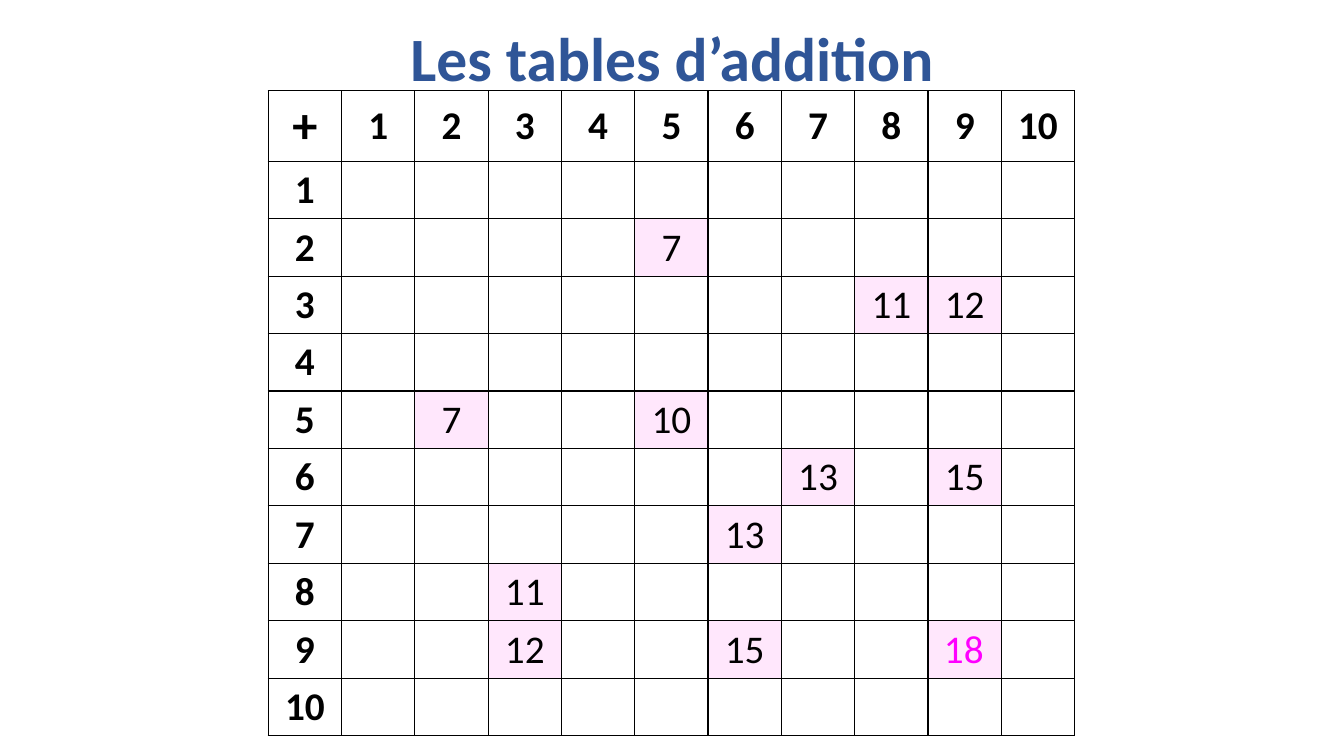
from dataclasses import dataclass
from lxml.etree import SubElement
from pptx import Presentation
from pptx.dml.color import RGBColor
from pptx.enum.text import MSO_ANCHOR, PP_ALIGN
from pptx.oxml.ns import qn
from pptx.util import Inches, Pt

TITLE = "Les tables d’addition"
OPERATOR = "+"
TERMS = range(1, 11)
GIVEN_SUMS = {(2, 5), (3, 8), (3, 9), (5, 2), (5, 5), (6, 7), (6, 9),
              (7, 6), (8, 3), (9, 3), (9, 6)}
ANSWER = (9, 9)


@dataclass(frozen=True)
class Theme:
    font: str = "Calibri"
    title: str = "2F5597"
    ink: str = "000000"
    paper: str = "FFFFFF"
    highlight: str = "FFE7FC"
    answer: str = "FF00FF"
    title_size: int = 44
    operator_size: int = 36
    number_size: int = 28
    border: int = 1


THEME = Theme()
SLIDE_W, SLIDE_H = 13.33, 7.5
GRID_LEFT, GRID_TOP, GRID_W = 2.66, 0.9, 8
HEADER_H, ROW_H = 0.7, 0.57
COUNT = len(TERMS) + 1
COLUMN_W = GRID_W / COUNT


def write(frame, text, size=THEME.number_size, color=THEME.ink, bold=False,
          anchor=MSO_ANCHOR.MIDDLE, spacing=None):
    frame.word_wrap = True
    frame.vertical_anchor = anchor
    line = frame.paragraphs[0]
    line.alignment = PP_ALIGN.CENTER
    line.line_spacing = spacing
    run = line.add_run()
    run.text = text
    run.font.name = THEME.font
    run.font.size = Pt(size)
    run.font.bold = bold
    run.font.color.rgb = RGBColor.from_string(color)


def add_text(slide, left, top, width, height, text, **style):
    box = slide.shapes.add_textbox(*map(Inches, (left, top, width, height)))
    write(box.text_frame, text, **style)


def paint(cell, color):
    properties = cell._tc.get_or_add_tcPr()
    for side in ("a:lnL", "a:lnR", "a:lnT", "a:lnB"):
        border = SubElement(properties, qn(side), w=str(Pt(THEME.border)))
        SubElement(SubElement(border, qn("a:solidFill")), qn("a:srgbClr"), val=THEME.ink)
    cell.fill.solid()
    cell.fill.fore_color.rgb = RGBColor.from_string(color)


def add_grid(slide):
    height = HEADER_H + ROW_H * len(TERMS)
    grid = slide.shapes.add_table(
        COUNT, COUNT, *map(Inches, (GRID_LEFT, GRID_TOP, GRID_W, height))).table
    grid.first_row = grid.horz_banding = False
    for index in range(COUNT):
        grid.columns[index].width = Inches(COLUMN_W)
        grid.rows[index].height = Inches(ROW_H if index else HEADER_H)
    for row in range(COUNT):
        for column in range(COUNT):
            cell = grid.cell(row, column)
            place = (row, column)
            highlighted = place in GIVEN_SUMS or place == ANSWER
            paint(cell, THEME.highlight if highlighted else THEME.paper)
            if place == (0, 0):
                write(cell.text_frame, OPERATOR, size=THEME.operator_size, bold=True)
            elif 0 in place:
                write(cell.text_frame, str(row + column), bold=True)
            elif place in GIVEN_SUMS:
                write(cell.text_frame, str(row + column))
            cell.vertical_anchor = MSO_ANCHOR.MIDDLE


def main():
    deck = Presentation()
    deck.slide_width, deck.slide_height = Inches(SLIDE_W), Inches(SLIDE_H)
    slide = deck.slides.add_slide(deck.slide_layouts[6])
    add_text(slide, 0.92, -0.11, 11.5, 1.45, TITLE, size=THEME.title_size,
             color=THEME.title, bold=True, spacing=0.9)
    add_grid(slide)
    add_text(slide, 9.23, 6.14, 0.66, ROW_H, str(sum(ANSWER)),
             color=THEME.answer, anchor=MSO_ANCHOR.TOP)
    deck.save("out.pptx")


if __name__ == "__main__":
    main()
